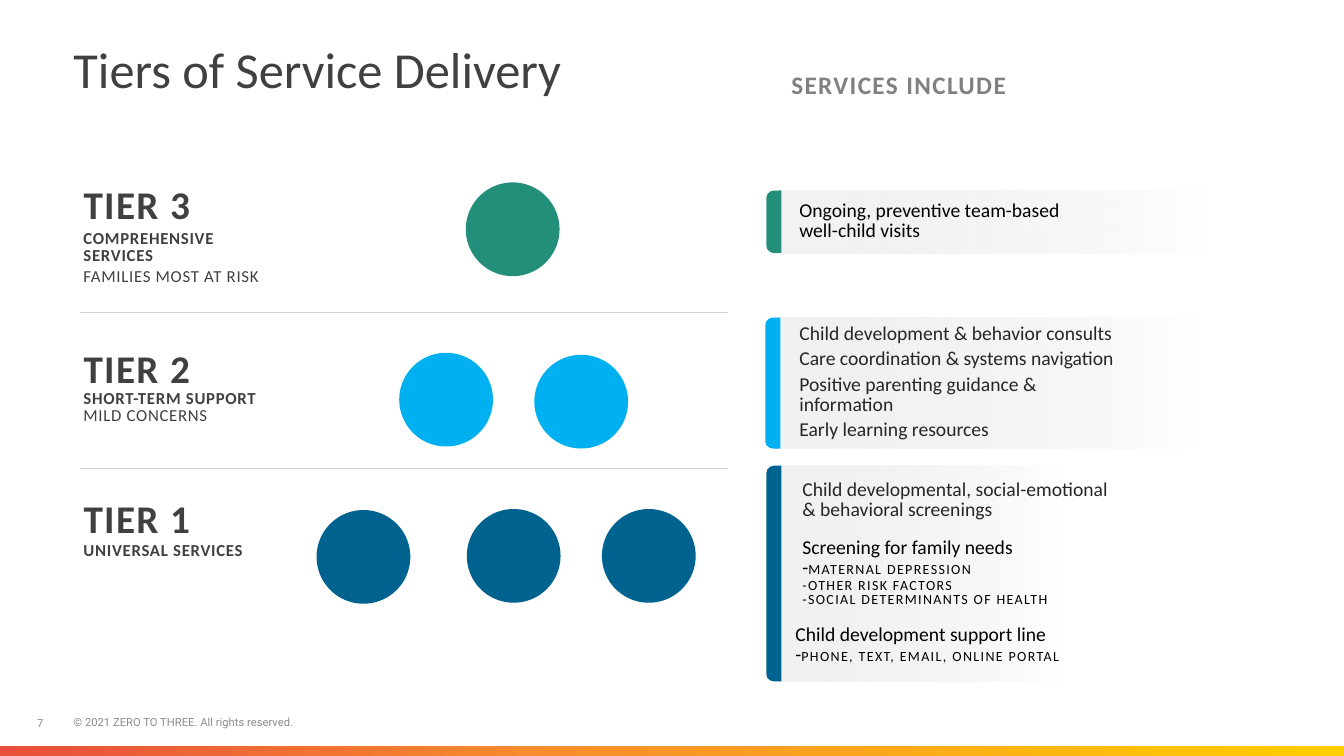
"""Build the slide on tiers of service delivery."""
import copy
from dataclasses import dataclass

import lxml.etree
import pptx
import pptx.dml.color
import pptx.enum.shapes
import pptx.enum.text
import pptx.oxml.ns
import pptx.shapes.autoshape
import pptx.shapes.shapetree
import pptx.util

Inches = pptx.util.Inches
Pt = pptx.util.Pt
Form = pptx.enum.shapes.MSO_SHAPE
Anchor = pptx.enum.text.MSO_ANCHOR
Shape = pptx.shapes.autoshape.Shape
Tree = pptx.shapes.shapetree.SlideShapes
Box = tuple[float, float, float, float]
Stop = tuple[int, str, int]


@dataclass(frozen=True)
class Theme:
    font: str = "Calibri"
    small: str = "Roboto"
    black: str = "000000"
    ink: str = "262626"
    dark: str = "404040"
    gray: str = "808080"
    pale: str = "8C8C8C"
    rule: str = "D0CECE"
    green: str = "238F7A"
    sky: str = "00B0F0"
    navy: str = "00628F"
    fade: tuple[Stop, ...] = ((14, "F2F2F2", 100), (100, "E7E6E6", 0))
    warm: tuple[Stop, ...] = ((0, "E84F3C", 100), (41, "F78D2C", 100), (100, "FFCE02", 100))
    title: float = 36
    tier: float = 28
    head: float = 18
    body: float = 14
    label: float = 12
    note: float = 10
    foot: float = 8


T = Theme()


@dataclass(frozen=True)
class Bit:
    text: str
    size: float
    color: str
    bold: bool = False
    track: float = 0
    font: str = T.font
    down: bool = False


@dataclass(frozen=True)
class Block:
    box: Box
    lines: list[list[Bit]]
    after: float = 0
    anchor: Anchor = Anchor.MIDDLE
    lead: float = 0.85


@dataclass(frozen=True)
class Tier:
    name: str
    color: str
    top: float
    spots: list[tuple[float, float]]
    panel: Box
    about: Block
    offers: list[Block]


def tint(code: str) -> pptx.dml.color.RGBColor:
    return pptx.dml.color.RGBColor.from_string(code)


def blend(shape: Shape, stops: tuple[Stop, ...], angle: int) -> None:
    shape.fill.background()
    blank = shape._element.spPr.find(pptx.oxml.ns.qn("a:noFill"))
    space = pptx.oxml.ns.nsdecls("a")
    marks = "".join(
        f'<a:gs pos="{pos * 1000}"><a:srgbClr val="{code}">'
        f'<a:alpha val="{alpha * 1000}"/></a:srgbClr></a:gs>'
        for pos, code, alpha in stops)
    grad = pptx.oxml.parse_xml(
        f'<a:gradFill {space} rotWithShape="1"><a:gsLst>{marks}</a:gsLst>'
        f'<a:lin ang="{angle * 60000}" scaled="0"/></a:gradFill>')
    blank.getparent().replace(blank, grad)


def draw(shapes: Tree, form: Form, box: Box, color: str = "") -> Shape:
    shape = shapes.add_shape(form, *map(Inches, box))
    shape.shadow.inherit = False
    shape.line.fill.background()
    if color:
        shape.fill.solid()
        shape.fill.fore_color.rgb = tint(color)
    return shape


def tab(shapes: Tree, box: Box, curve: float, color: str = "") -> Shape:
    left, top, width, height = box
    turned = (left + (width - height) / 2, top + (height - width) / 2, height, width)
    shape = draw(shapes, Form.ROUND_2_SAME_RECTANGLE, turned, color)
    shape.rotation = 270
    shape.adjustments[0] = curve
    return shape


def write(shapes: Tree, block: Block) -> None:
    frame = shapes.add_textbox(*map(Inches, block.box)).text_frame
    frame.word_wrap = True
    frame.vertical_anchor = block.anchor
    for index, bits in enumerate(block.lines):
        para = frame.add_paragraph() if index else frame.paragraphs[0]
        para.line_spacing = block.lead
        para.space_after = Pt(block.after)
        for bit in bits:
            if bit.down:
                para.add_line_break()
            run = para.add_run()
            run.text = bit.text
            run.font.name = bit.font
            run.font.size = Pt(bit.size)
            run.font.bold = bit.bold
            run.font.color.rgb = tint(bit.color)
            run._r.get_or_add_rPr().set("spc", str(int(bit.track * 100)))
            if bit.down:
                run._r.getprevious().append(copy.deepcopy(run._r.rPr))


def rule(shapes: Tree, y: float) -> None:
    line = shapes.add_connector(
        pptx.enum.shapes.MSO_CONNECTOR.STRAIGHT, *map(Inches, (0.79, y, 7.22, y)))
    line.line.color.rgb = tint(T.rule)
    line.line.width = Pt(0.5)
    lxml.etree.SubElement(line._element.spPr, pptx.oxml.ns.qn("a:effectLst"))


def show(shapes: Tree, tier: Tier) -> None:
    left, top, width, height = tier.panel
    blend(tab(shapes, tier.panel, 0.06), T.fade, 90)
    tab(shapes, (left - 0.05, top, 0.15, height), 0.5, tier.color)
    for x, y in tier.spots:
        draw(shapes, Form.OVAL, (x, y, 0.93, 0.93), tier.color)
    name = Bit(tier.name, T.tier, T.dark, True, 1)
    for block in (Block((0.73, tier.top, 2.01, 0.51), [[name]]), tier.about, *tier.offers):
        write(shapes, block)


def label(text: str, bold: bool = True, down: bool = False) -> Bit:
    return Bit(text, T.label, T.dark, bold, 0.5, down=down)


def about(top: float, lines: list[list[Bit]], after: float = 0) -> Block:
    return Block((0.73, top, 1.94, 0.62), lines, after, Anchor.TOP)


def body(text: str, color: str = T.ink, down: bool = False) -> Bit:
    return Bit(text, T.body, color, down=down)


def note(text: str, down: bool = False) -> Bit:
    return Bit(text, T.note, T.black, track=1, down=down)


def foot(text: str, box: Box) -> Block:
    return Block(box, [[Bit(text, T.foot, T.pale, font=T.small)]], 0, Anchor.BOTTOM, 1)


TIERS = [
    Tier("TIER 3", T.green, 1.8, [(4.62, 1.81)], (7.65, 1.89, 4.36, 0.62),
         about(2.24, [[label("COMPREHENSIVE SERVICES")],
                      [label("FAMILIES MOST AT RISK", False)]], 3),
         [Block((7.83, 1.95, 2.93, 0.5),
                [[body("Ongoing, preventive team-based well-child visits", T.black)]])]),
    Tier("TIER 2", T.sky, 3.43, [(3.96, 3.5), (5.3, 3.52)], (7.64, 3.15, 4.28, 1.3),
         about(3.83, [[label("SHORT-TERM SUPPORT"), label("MILD CONCERNS", False, True)]]),
         [Block((7.83, 3.26, 3.53, 1.07),
                [[body(text)] for text in (
                    "Child development & behavior consults",
                    "Care coordination & systems navigation",
                    "Positive parenting guidance & information",
                    "Early learning resources")], 4)]),
    Tier("TIER 1", T.navy, 4.92, [(3.14, 5.06), (4.63, 5.05), (5.97, 5.05)],
         (7.65, 4.62, 2.91, 2.14),
         about(5.34, [[label("UNIVERSAL SERVICES")]]),
         [Block((7.86, 4.72, 3.43, 0.5),
                [[body("Child developmental, social-emotional"),
                  body("& behavioral screenings", down=True)]]),
          Block((7.86, 5.29, 2.89, 0.79),
                [[body("Screening for family needs", T.black),
                  body("-", T.black, True), note("MATERNAL DEPRESSION"),
                  note("-OTHER RISK FACTORS", True),
                  note("-SOCIAL DETERMINANTS OF HEALTH", True)]]),
          Block((7.79, 6.15, 3.09, 0.5),
                [[body("Child development support line", T.black),
                  body("-", T.black, True), note("PHONE, TEXT, EMAIL, ONLINE PORTAL")]])]),
]
TEXTS = [
    Block((0.63, 0.4, 12.08, 0.82), [[Bit("Tiers of Service Delivery", T.title, T.dark)]],
          0, Anchor.TOP, 0.9),
    Block((7.75, 0.68, 2.6, 0.36), [[Bit("SERVICES INCLUDE", T.head, T.gray, True, 1)]]),
    foot("© 2021 ZERO TO THREE. All rights reserved.", (0.63, 7.05, 10.4, 0.23)),
    foot("7", (0.27, 7.06, 0.46, 0.23)),
]


def main() -> None:
    deck = pptx.Presentation()
    deck.slide_width, deck.slide_height = Inches(13.33), Inches(7.5)
    shapes = deck.slides.add_slide(deck.slide_layouts[6]).shapes
    for block in TEXTS:
        write(shapes, block)
    blend(draw(shapes, Form.RECTANGLE, (0, 7.4, 13.33, 0.1)), T.warm, 0)
    for y in (3.1, 4.65):
        rule(shapes, y)
    for tier in TIERS:
        show(shapes, tier)
    deck.save("out.pptx")


if __name__ == "__main__":
    main()
